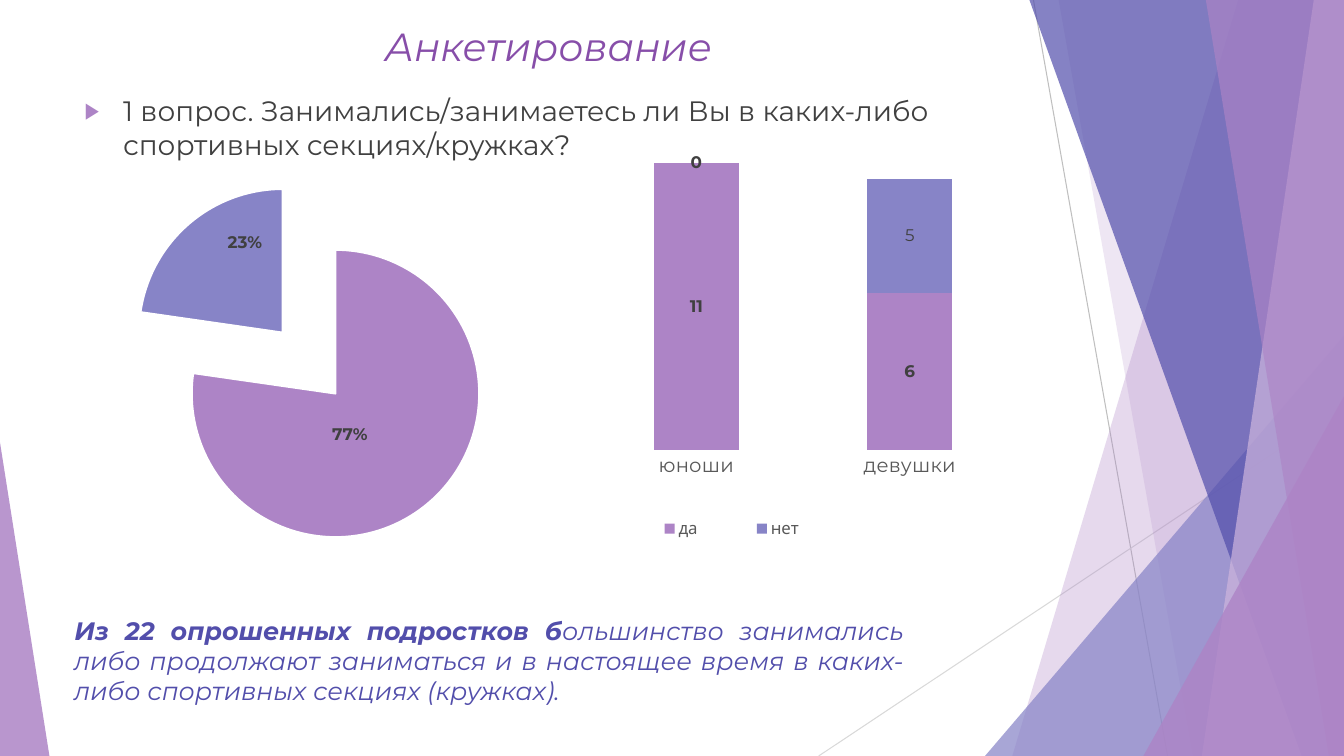
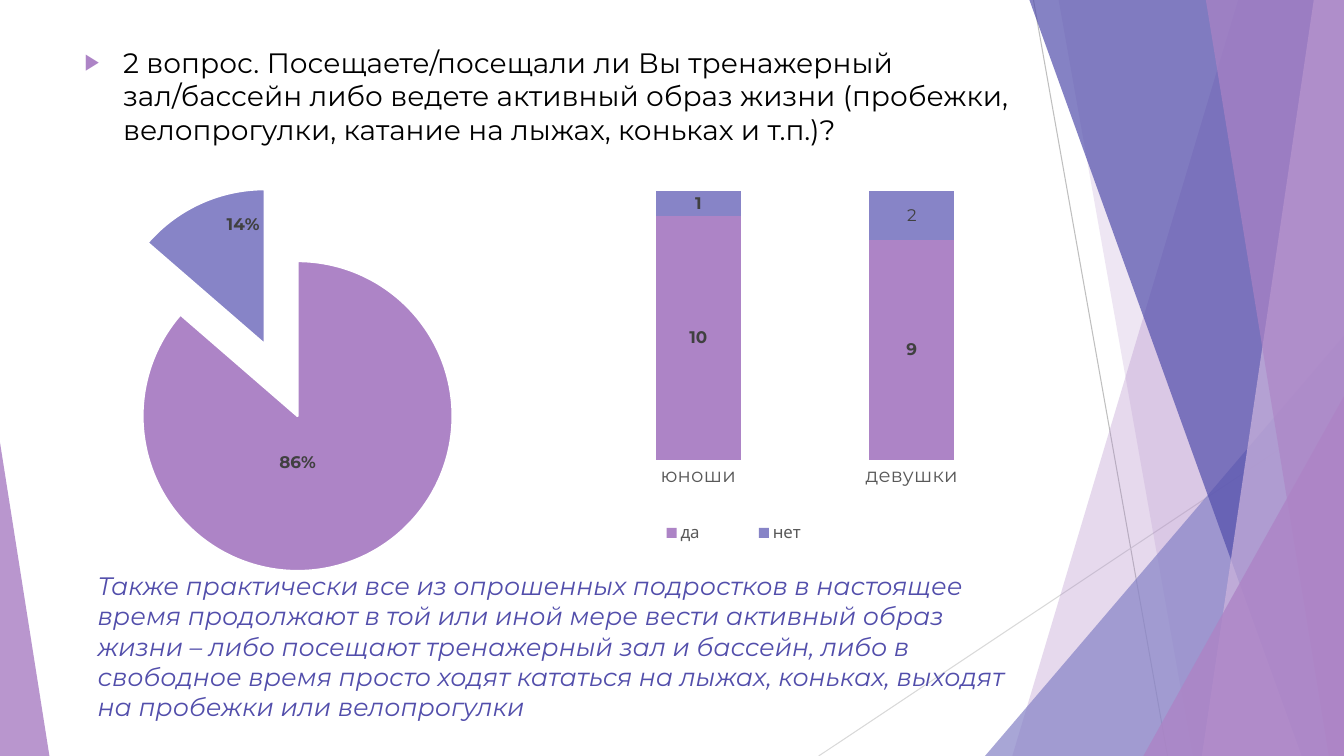
from dataclasses import dataclass

import lxml.etree
import pptx
import pptx.chart.data
import pptx.dml.color
import pptx.enum.chart
import pptx.enum.shapes
import pptx.enum.text
import pptx.oxml.ns
import pptx.util

Inches = pptx.util.Inches
Pt = pptx.util.Pt
RGBColor = pptx.dml.color.RGBColor
qn = pptx.oxml.ns.qn

# Shared theme
LILAC = RGBColor(0xAD, 0x84, 0xC6)
PALE_LILAC = RGBColor(0xCE, 0xB5, 0xDD)
PERIWINKLE = RGBColor(0x87, 0x84, 0xC7)
INDIGO = RGBColor(0x52, 0x4E, 0xAB)
PURPLE = RGBColor(0x87, 0x4E, 0xA9)
BLACK = RGBColor(0, 0, 0)
WHITE = RGBColor(0xFF, 0xFF, 0xFF)
DARK_GREY = RGBColor(0x40, 0x40, 0x40)
MID_GREY = RGBColor(0x59, 0x59, 0x59)
LINE_GREY = RGBColor(0xBF, 0xBF, 0xBF)
LIGHT_GREY = RGBColor(0xD9, 0xD9, 0xD9)
TEXT_FONT = "Montserrat"
CHART_FONT = "Karla"
WIDTH, HEIGHT = 13.33, 7.5


@dataclass(frozen=True)
class Box:
    left: float
    top: float
    width: float
    height: float

    def emu(self) -> tuple:
        return tuple(Inches(v) for v in (self.left, self.top, self.width, self.height))


@dataclass(frozen=True)
class Ray:
    start: tuple
    end: tuple
    color: RGBColor


@dataclass(frozen=True)
class Band:
    """A band running from the top edge to the bottom edge."""
    top_left: float
    bottom_left: float
    bottom_right: float
    color: RGBColor
    opacity: int


@dataclass(frozen=True)
class Wedge:
    box: Box
    apex: float
    color: RGBColor
    opacity: int


@dataclass(frozen=True)
class Slice:
    value: int
    label: str
    shift: tuple  # label offset as a share of the chart
    explosion: int


@dataclass(frozen=True)
class Pie:
    box: Box
    plot: Box
    explosion: int
    slices: tuple


@dataclass(frozen=True)
class Columns:
    box: Box
    yes: tuple
    no: tuple
    girls_no_label: str


@dataclass(frozen=True)
class Question:
    text: str
    box: Box
    color: RGBColor
    pie: Pie
    columns: Columns
    conclusion: tuple  # (text, bold) runs
    conclusion_box: Box
    justified: bool = False
    title: str = ""


DECOR = (
    Ray((10.25, 0), (11.58, HEIGHT), LINE_GREY),
    Ray((WIDTH, 4.03), (8.12, HEIGHT), LIGHT_GREY),
    Band(12.28, 10.04, WIDTH, LILAC, 30),
    Band(10.5, 11.83, WIDTH, LILAC, 20),
    Wedge(Box(9.77, 3.33, 3.56, 4.17), 1, PERIWINKLE, 72),
    Band(10.21, 12.91, WIDTH, INDIGO, 70),
    Band(13.03, 11.92, WIDTH, PALE_LILAC, 70),
    Band(11.96, 13.18, WIDTH, LILAC, 65),
    Wedge(Box(11.34, 3.93, 1.99, 3.57), 1, LILAC, 80),
    Wedge(Box(0, 4.39, 0.49, 3.11), 0, LILAC, 85),
)
TITLE_BOX = Box(0.74, 0.17, 9.4, 0.84)
COLUMN_PLOT = Box(0.106, 0.01, 0.882, 0.656)
LEGEND_AREA = Box(0.15, 0.79, 0.5, 0.08)

QUESTIONS = (
    Question(
        title="Анкетирование",
        text="1 вопрос. Занимались/занимаетесь ли Вы в каких-либо спортивных секциях/кружках?",
        box=Box(0.74, 0.88, 9.4, 5.28),
        color=DARK_GREY,
        pie=Pie(Box(0.74, 1.72, 4.62, 4.43), Box(0.007, 0.013, 0.993, 0.824), 28,
                (Slice(17, "77%", (-0.07, -0.03), 28), Slice(5, "23%", (0.02, -0.08), 28))),
        columns=Columns(Box(5.34, 1.31, 4.8, 4.74), (11, 6), (0, 4.4), "5"),
        conclusion=(("Из 22 опрошенных подростков б", True),
                    ("ольшинство занимались либо продолжают заниматься и в настоящее время "
                     "в каких-либо спортивных секциях (кружках).", False)),
        conclusion_box=Box(0.64, 6.05, 8.42, 1.01),
        justified=True,
    ),
    Question(
        text="2 вопрос. Посещаете/посещали ли Вы тренажерный зал/бассейн либо ведете "
             "активный образ жизни (пробежки, велопрогулки, катание на лыжах, коньках и т.п.)?",
        box=Box(0.74, 0.4, 9.4, 6.21),
        color=BLACK,
        pie=Pie(Box(0.03, 1.77, 5.31, 4.03), Box(0.002, 0.024, 0.993, 0.824), 8,
                (Slice(19, "86%", (-0.06, -0.06), 43), Slice(3, "14%", (0.02, -0.12), 8))),
        columns=Columns(Box(5.36, 1.61, 4.8, 4.43), (10, 9), (1, 2), "2"),
        conclusion=(("Также практически все из опрошенных подростков в настоящее время продолжают "
                     "в той или иной мере вести активный образ жизни – либо посещают тренажерный "
                     "зал и бассейн, либо в свободное время просто ходят кататься на лыжах, "
                     "коньках, выходят на пробежки или велопрогулки", False),),
        conclusion_box=Box(0.87, 5.61, 9.29, 1.62),
    ),
)


def style_font(font, size: float, color: RGBColor, bold: bool = False,
               italic: bool = False, name: str = TEXT_FONT) -> None:
    font.name, font.size, font.bold, font.italic = name, Pt(size), bold, italic
    font.color.rgb = color


def add_run(paragraph, text: str, *style, **options) -> None:
    run = paragraph.add_run()
    run.text = text
    style_font(run.font, *style, **options)


def child(parent, tag: str, **attributes):
    return lxml.etree.SubElement(parent, qn(tag), attributes)


def place(shape, box: Box) -> None:
    shape.left, shape.top, shape.width, shape.height = box.emu()


# Background decoration
def paint(shape, color: RGBColor, opacity: int) -> None:
    shape.shadow.inherit = False
    shape.fill.solid()
    shape.fill.fore_color.rgb = color
    shape.line.fill.background()
    solid = shape.element.spPr.find(qn("a:solidFill"))
    child(solid[0], "a:alpha", val=str(opacity * 1000))


def add_decor(slide, layout) -> None:
    """Draw the decoration as a group and move it to the layout all slides use."""
    group = slide.shapes.add_group_shape()
    for part in DECOR:
        if isinstance(part, Ray):
            ray = group.shapes.add_connector(
                pptx.enum.shapes.MSO_CONNECTOR.STRAIGHT,
                *(Inches(v) for v in part.start + part.end))
            ray.line.color.rgb = part.color
            ray.line.width = Pt(0.75)
            child(ray.element.spPr, "a:effectLst")
        elif isinstance(part, Band):
            outline = group.shapes.build_freeform(Inches(part.top_left), 0)
            corners = ((WIDTH, 0), (part.bottom_right, HEIGHT), (part.bottom_left, HEIGHT))
            outline.add_line_segments([(Inches(x), Inches(y)) for x, y in corners])
            paint(outline.convert_to_shape(), part.color, part.opacity)
        else:
            wedge = group.shapes.add_shape(
                pptx.enum.shapes.MSO_SHAPE.ISOSCELES_TRIANGLE, *part.box.emu())
            wedge.adjustments[0] = part.apex
            paint(wedge, part.color, part.opacity)
    for number, properties in enumerate(group.element.iter(qn("p:cNvPr")), 100):
        properties.set("id", str(number))
    layout.shapes.element.insert(2, group.element)


# Texts
def fill_title(title, text: str) -> None:
    if not text:
        title.element.getparent().remove(title.element)
        return
    place(title, TITLE_BOX)
    frame = title.text_frame
    frame.auto_size = pptx.enum.text.MSO_AUTO_SIZE.NONE
    frame.vertical_anchor = pptx.enum.text.MSO_ANCHOR.TOP
    frame.paragraphs[0].alignment = pptx.enum.text.PP_ALIGN.CENTER
    add_run(frame.paragraphs[0], text, 28, PURPLE, italic=True)


def fill_question(body, question: Question) -> None:
    place(body, question.box)
    body.text_frame.auto_size = pptx.enum.text.MSO_AUTO_SIZE.NONE
    paragraph = body.text_frame.paragraphs[0]
    paragraph.space_before = Pt(10)
    add_run(paragraph, question.text, 20, question.color)
    properties = paragraph.runs[0].font._element.getparent().getparent().get_or_add_pPr()
    properties.set("marL", str(Inches(0.38)))
    properties.set("indent", str(Inches(-0.38)))
    child(child(properties, "a:buClr"), "a:srgbClr", val=str(LILAC))
    child(properties, "a:buSzPct", val="80000")
    child(properties, "a:buFont", typeface="Arial")
    child(properties, "a:buChar", char="▶")


def add_conclusion(slide, question: Question) -> None:
    frame = slide.shapes.add_textbox(*question.conclusion_box.emu()).text_frame
    frame.word_wrap = True
    paragraph = frame.paragraphs[0]
    if question.justified:
        paragraph.alignment = pptx.enum.text.PP_ALIGN.JUSTIFY
    for text, bold in question.conclusion:
        add_run(paragraph, text, 18, INDIGO, bold, True)


# Charts
def manual_layout(area: Box, inner: bool = False):
    layout = lxml.etree.Element(qn("c:layout"))
    manual = child(layout, "c:manualLayout")
    if inner:
        child(manual, "c:layoutTarget", val="inner")
    for tag in ("c:xMode", "c:yMode"):
        child(manual, tag, val="edge")
    for tag, value in zip("xywh", (area.left, area.top, area.width, area.height)):
        child(manual, f"c:{tag}", val=str(value))
    return layout


def add_chart(slide, kind, box: Box, plot: Box, data):
    chart = slide.shapes.add_chart(kind, *box.emu(), data).chart
    chart.has_title = False
    chart.has_legend = False
    style_font(chart.font, 10, BLACK, name=CHART_FONT)
    area = chart.element.chart.plotArea
    for automatic in area.findall(qn("c:layout")):
        area.remove(automatic)
    area.insert(0, manual_layout(plot, inner=True))
    return chart


def show_values(series) -> None:
    series.data_labels.show_value = True
    style_font(series.data_labels.font, 12, DARK_GREY, True)


def label_point(point, text: str, bold: bool) -> None:
    paragraph = point.data_label.text_frame.paragraphs[0]
    add_run(paragraph, text, 12, DARK_GREY, bold)
    point.data_label.position = pptx.enum.chart.XL_LABEL_POSITION.CENTER


def add_pie(slide, pie: Pie) -> None:
    data = pptx.chart.data.CategoryChartData()
    data.categories = ("1", "2")
    data.add_series("Series 1", [part.value for part in pie.slices])
    chart = add_chart(slide, pptx.enum.chart.XL_CHART_TYPE.PIE, pie.box, pie.plot, data)
    series = chart.plots[0].series[0]
    show_values(series)
    for index, (part, color) in enumerate(zip(pie.slices, (LILAC, PERIWINKLE))):
        point = series.points[index]
        point.format.fill.solid()
        point.format.fill.fore_color.rgb = color
        point.format.line.color.rgb = WHITE
        point.format.line.width = Pt(1.5)
        label_point(point, part.label, True)
        slice_xml = series._element.findall(qn("c:dPt"))[index]
        explosion = child(slice_xml, "c:explosion", val=str(part.explosion))
        slice_xml.find(qn("c:spPr")).addprevious(explosion)
        label = series._element.find(qn("c:dLbls")).findall(qn("c:dLbl"))[index]
        layout = lxml.etree.Element(qn("c:layout"))
        manual = child(layout, "c:manualLayout")
        for axis, shift in zip("xy", part.shift):
            child(manual, f"c:{axis}", val=str(shift))
        label.find(qn("c:idx")).addnext(layout)
    explosion = child(series._element, "c:explosion", val=str(pie.explosion))
    series._element.find(qn("c:dPt")).addprevious(explosion)


def add_columns(slide, columns: Columns) -> None:
    data = pptx.chart.data.CategoryChartData()
    data.categories = ("юноши", "девушки")
    data.add_series("да", columns.yes)
    data.add_series("нет", columns.no)
    chart = add_chart(slide, pptx.enum.chart.XL_CHART_TYPE.COLUMN_STACKED,
                      columns.box, COLUMN_PLOT, data)
    bars = chart.plots[0]
    bars.gap_width, bars.overlap, bars.vary_by_categories = 150, 100, False
    for series, color in zip(bars.series, (LILAC, PERIWINKLE)):
        series.format.fill.solid()
        series.format.fill.fore_color.rgb = color
        show_values(series)
    label_point(bars.series[1].points[1], columns.girls_no_label, False)
    values, groups = chart.value_axis, chart.category_axis
    values.minimum_scale, values.maximum_scale = 0, 12
    values.has_major_gridlines = values.visible = False
    groups.major_tick_mark = pptx.enum.chart.XL_TICK_MARK.NONE
    groups.format.line.fill.background()
    style_font(groups.tick_labels.font, 14, MID_GREY)
    chart.has_legend = True
    chart.legend.position = pptx.enum.chart.XL_LEGEND_POSITION.BOTTOM
    chart.legend.include_in_layout = False
    style_font(chart.legend.font, 12, MID_GREY, name=CHART_FONT)
    legend = chart.legend._element
    for automatic in legend.findall(qn("c:layout")):
        legend.remove(automatic)
    legend.find(qn("c:legendPos")).addnext(manual_layout(LEGEND_AREA))


def main() -> None:
    deck = pptx.Presentation()
    deck.slide_width, deck.slide_height = Inches(WIDTH), Inches(HEIGHT)
    layout = deck.slide_layouts[1]
    for number, question in enumerate(QUESTIONS):
        slide = deck.slides.add_slide(layout)
        if number == 0:
            add_decor(slide, layout)
        fill_question(slide.placeholders[1], question)
        fill_title(slide.shapes.title, question.title)
        add_columns(slide, question.columns)
        add_pie(slide, question.pie)
        add_conclusion(slide, question)
    deck.save("out.pptx")


if __name__ == "__main__":
    main()
